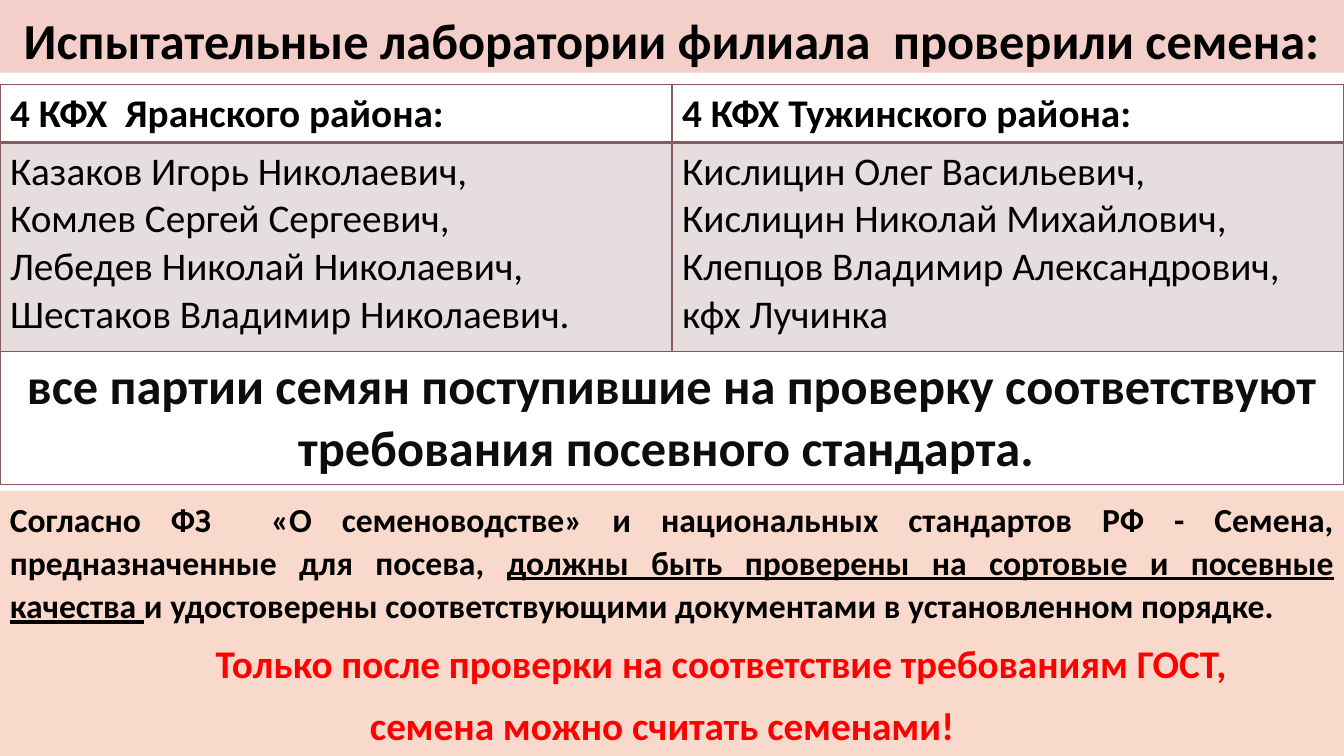
"""Build the slide on farm seeds checked by the branch's testing laboratories."""
import lxml.etree
import pptx
import pptx.dml.color
import pptx.enum.shapes
import pptx.enum.text
import pptx.oxml.ns
import pptx.util

WIDTH, HEIGHT = 13.33, 7.5
FONT = "Calibri"
BORDER = "855D5D"
TITLE = "Испытательные лаборатории филиала  проверили семена:"
TITLE_HEIGHT = 0.72
TABLE_TOP, ROW_HEIGHTS = 0.84, (0.53, 2.07, 1.16)
LAW_TOP = 4.87
DISTRICTS = [
    ("4 КФХ  Яранского района:",
     ["Казаков Игорь Николаевич,", "Комлев Сергей Сергеевич,",
      "Лебедев Николай Николаевич, Шестаков Владимир Николаевич."]),
    ("4 КФХ Тужинского района:",
     ["Кислицин Олег Васильевич,",
      "Кислицин Николай Михайлович, Клепцов Владимир Александрович,",
      "кфх Лучинка"]),
]
VERDICT = ("все партии семян поступившие на проверку соответствуют "
           "требования посевного стандарта. ")
LAW = [
    ("Согласно ФЗ  «О семеноводстве» и национальных стандартов РФ - "
     "Семена, предназначенные для посева, ", False),
    ("должны быть проверены на сортовые и посевные качества ", True),
    ("и удостоверены соответствующими документами в установленном порядке.", False),
]
SLOGAN = [
    ("Только после проверки на соответствие требованиям ГОСТ,", {"marL": 0.97}),
    ("семена можно считать семенами!", {"marR": 0.2}),
]
ALIGN = pptx.enum.text.PP_ALIGN


def inches(value):
    """Convert inches to slide units."""
    return pptx.util.Inches(value)


def rgb(color):
    """Turn a hex string into a colour."""
    return pptx.dml.color.RGBColor.from_string(color)


def element(parent, tag, **attributes):
    """Append a DrawingML element to its parent."""
    return lxml.etree.SubElement(parent, pptx.oxml.ns.qn(tag), attributes)


def line(parent, index, tag, color, width):
    """Insert a solid line definition at a child index."""
    ln = element(parent, tag, w=str(pptx.util.Pt(width)))
    element(element(ln, "a:solidFill"), "a:srgbClr", val=color)
    parent.insert(index, ln)


def add_text(p, text, size=28, color="000000", bold=True, underline=None, outline=None):
    """Add a formatted run to a paragraph."""
    r = p.add_run()
    r.text = text
    r.font.name, r.font.size = FONT, pptx.util.Pt(size)
    r.font.bold, r.font.underline = bold, underline
    r.font.color.rgb = rgb(color)
    if outline:
        line(r.font._element, 0, "a:ln", outline, 0.75)


def paragraph(tf, first=False, align=ALIGN.LEFT, spaced=False):
    """Return the first or a new paragraph of a text frame."""
    p = tf.paragraphs[0] if first else tf.add_paragraph()
    p.alignment = align
    if spaced:
        p.line_spacing, p.space_after = 1.07, pptx.util.Pt(8)
    return p


def panel(sp, top, height, color):
    """Format a full-width coloured text panel."""
    sp.left, sp.top = 0, inches(top)
    sp.width, sp.height = inches(WIDTH), inches(height)
    sp.fill.solid()
    sp.fill.fore_color.rgb = rgb(color)
    tf = sp.text_frame
    tf.word_wrap = True
    tf.auto_size = pptx.enum.text.MSO_AUTO_SIZE.NONE
    tf.vertical_anchor = pptx.enum.text.MSO_ANCHOR.TOP
    return tf


def format_cell(cell, row):
    """Set the fill and borders of a table cell."""
    if row == 1:
        cell.fill.solid()
        cell.fill.fore_color.rgb = rgb(BORDER)
        shade = cell._tc.tcPr.find(".//" + pptx.oxml.ns.qn("a:srgbClr"))
        element(shade, "a:alpha", val="20000")
    else:
        cell.fill.background()
    widths = (1, 1, 2 if row == 1 else 1, 2 if row == 0 else 1)
    for index, (side, width) in enumerate(zip("LRTB", widths)):
        line(cell._tc.tcPr, index, "a:ln" + side, BORDER, width)


def add_farms(slide):
    """Add the table of farms and the verdict."""
    rows, cols = len(ROW_HEIGHTS), len(DISTRICTS)
    table = slide.shapes.add_table(
        rows, cols, 0, inches(TABLE_TOP), inches(WIDTH), inches(sum(ROW_HEIGHTS))).table
    table.first_row = table.horz_banding = False
    for row, height in enumerate(ROW_HEIGHTS):
        table.rows[row].height = inches(height)
        for col in range(cols):
            format_cell(table.cell(row, col), row)
    for col, (heading, farms) in enumerate(DISTRICTS):
        add_text(paragraph(table.cell(0, col).text_frame, True), heading)
        tf = table.cell(1, col).text_frame
        for i, farm in enumerate(farms):
            add_text(paragraph(tf, i == 0), farm, bold=False)
    verdict = table.cell(2, 0)
    verdict.merge(table.cell(2, cols - 1))
    add_text(paragraph(verdict.text_frame, True, ALIGN.CENTER), VERDICT,
             size=36, color="0D0D0D", outline="9E3611")


def add_law(slide):
    """Add the panel with the legal requirement and the slogan."""
    sp = slide.shapes.add_shape(
        pptx.enum.shapes.MSO_SHAPE.RECTANGLE, 0, 0, inches(1), inches(1))
    sp.shadow.inherit = False
    sp.line.fill.background()
    tf = panel(sp, LAW_TOP, HEIGHT - LAW_TOP, "FAD9CD")
    p = paragraph(tf, True, ALIGN.JUSTIFY, True)
    for text, underline in LAW:
        add_text(p, text, size=24, underline=underline)
    for text, margins in SLOGAN:
        p = paragraph(tf, align=ALIGN.CENTER, spaced=True)
        for name, value in margins.items():
            p._p.get_or_add_pPr().set(name, str(inches(value)))
        add_text(p, text, color="FF0000", outline="0D0D0D")


def main():
    """Create and save the presentation."""
    prs = pptx.Presentation()
    prs.slide_width, prs.slide_height = inches(WIDTH), inches(HEIGHT)
    slide = prs.slides.add_slide(prs.slide_layouts[5])
    tf = panel(slide.shapes.title, 0, TITLE_HEIGHT, "F4CEC9")
    add_text(paragraph(tf, True, ALIGN.CENTER, True), TITLE, size=36)
    add_law(slide)
    add_farms(slide)
    prs.save("out.pptx")


if __name__ == "__main__":
    main()
